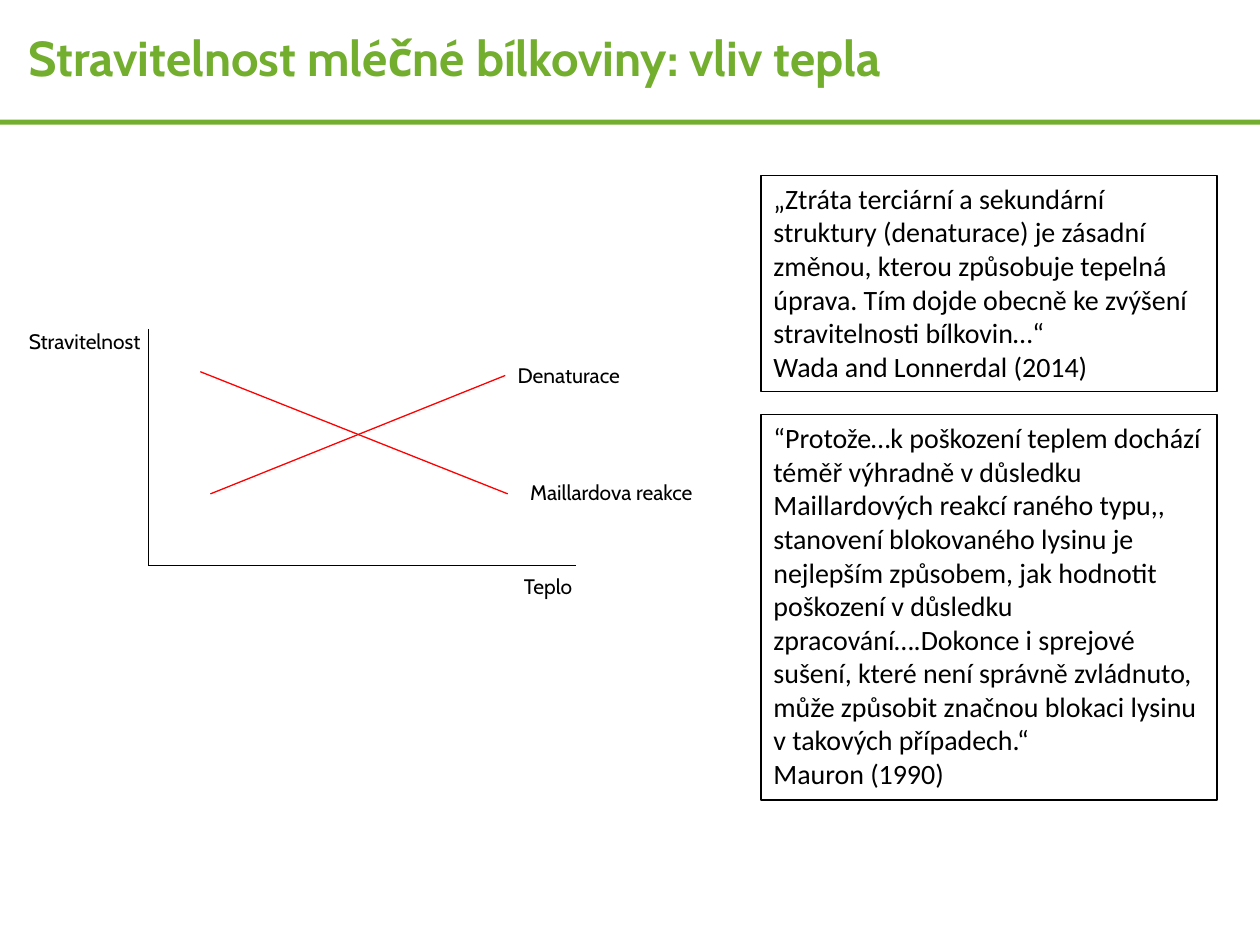
from lxml import etree
from pptx import Presentation
from pptx import util as u
from pptx.dml.color import RGBColor
from pptx.enum import shapes, text
from pptx.oxml import ns

GREEN = RGBColor(0x73, 0xAE, 0x2F)
BLACK = RGBColor(0, 0, 0)
RED = RGBColor(0xFF, 0, 0)

AXES = [(1.18, 4.49, 4.57, 4.49), (1.18, 2.61, 1.18, 4.49)]
TRENDS = [(1.59, 2.95, 4.03, 3.92), (1.67, 3.92, 4.01, 2.98)]
LABELS = [
    ("Stravitelnost", 0.13, 2.56, 1.12, 0.3),
    ("Denaturace", 4.01, 2.83, 1.05, 0.3),
    ("Maillardova reakce", 4.11, 3.76, 1.58, 0.3),
    ("Teplo", 4.06, 4.5, 0.59, 0.3),
]
QUOTES = [
    (1.39, 1.72, [
        "„Ztráta terciární a sekundární struktury (denaturace) je zásadní "
        "změnou, kterou způsobuje tepelná úprava. Tím dojde obecně ke zvýšení "
        "stravitelnosti bílkovin…“",
        "Wada and Lonnerdal (2014)",
    ]),
    (3.29, 3.06, [
        "“Protože…k poškození teplem dochází téměř výhradně v důsledku "
        "Maillardových reakcí raného typu,, stanovení blokovaného lysinu je "
        "nejlepším způsobem, jak hodnotit poškození v důsledku "
        "zpracování….Dokonce i sprejové sušení, které není správně zvládnuto, "
        "může způsobit značnou blokaci lysinu v takových případech.“",
        "Mauron (1990)",
    ]),
]


class SlideBuilder:
    title_style = {"name": "Cabin", "size": u.Pt(28), "bold": True}
    label_style = {"name": "Cabin", "size": u.Pt(12)}
    quote_style = {"name": "Calibri", "size": u.Pt(16)}
    line_width = u.Pt(0.75)

    def __init__(self, presentation):
        self.slide = presentation.slides.add_slide(presentation.slide_layouts[5])

    def fill_text(self, frame, lines, style, color, **layout):
        for name, value in layout.items():
            setattr(frame, name, value)
        frame.text = "\n".join(lines)
        for paragraph in frame.paragraphs:
            paragraph.alignment = text.PP_ALIGN.LEFT
            for name, value in style.items():
                setattr(paragraph.font, name, value)
            paragraph.font.color.rgb = color

    def title(self, wording, *box):
        shape = self.slide.shapes.title
        for name, value in zip(("left", "top", "width", "height"), box):
            setattr(shape, name, u.Inches(value))
        self.fill_text(shape.text_frame, [wording], self.title_style, GREEN,
                       vertical_anchor=text.MSO_ANCHOR.MIDDLE)

    def rectangle(self, *box):
        shape = self.slide.shapes.add_shape(
            shapes.MSO_SHAPE.RECTANGLE, *map(u.Inches, box))
        shape.shadow.inherit = False
        return shape

    def bar(self, *box):
        shape = self.rectangle(*box)
        shape.fill.solid()
        shape.fill.fore_color.rgb = GREEN
        shape.line.fill.background()

    def line(self, color, *ends):
        connector = self.slide.shapes.add_connector(
            shapes.MSO_CONNECTOR.STRAIGHT, *map(u.Inches, ends))
        connector.line.color.rgb = color
        connector.line.width = self.line_width
        etree.SubElement(connector._element.spPr, ns.qn("a:effectLst"))

    def label(self, wording, *box):
        shape = self.slide.shapes.add_textbox(*map(u.Inches, box))
        self.fill_text(shape.text_frame, [wording], self.label_style, BLACK,
                       word_wrap=False,
                       auto_size=text.MSO_AUTO_SIZE.SHAPE_TO_FIT_TEXT)

    def quote(self, lines, *box):
        shape = self.rectangle(*box)
        shape.fill.background()
        shape.line.color.rgb = BLACK
        shape.line.width = self.line_width
        self.fill_text(shape.text_frame, lines, self.quote_style, BLACK,
                       word_wrap=True, vertical_anchor=text.MSO_ANCHOR.TOP,
                       auto_size=text.MSO_AUTO_SIZE.SHAPE_TO_FIT_TEXT)


def main():
    presentation = Presentation()
    presentation.slide_width = u.Inches(10)
    presentation.slide_height = u.Inches(7.5)
    builder = SlideBuilder(presentation)
    builder.bar(0, 0.95, 10, 0.04)
    builder.title("Stravitelnost mléčné bílkoviny: vliv tepla", 0.13, 0, 9.31, 0.91)
    for color, lines in ((BLACK, AXES), (RED, TRENDS)):
        for ends in lines:
            builder.line(color, *ends)
    for label in LABELS:
        builder.label(*label)
    for top, height, lines in QUOTES:
        builder.quote(lines, 6.04, top, 3.62, height)
    presentation.save("out.pptx")


if __name__ == "__main__":
    main()
